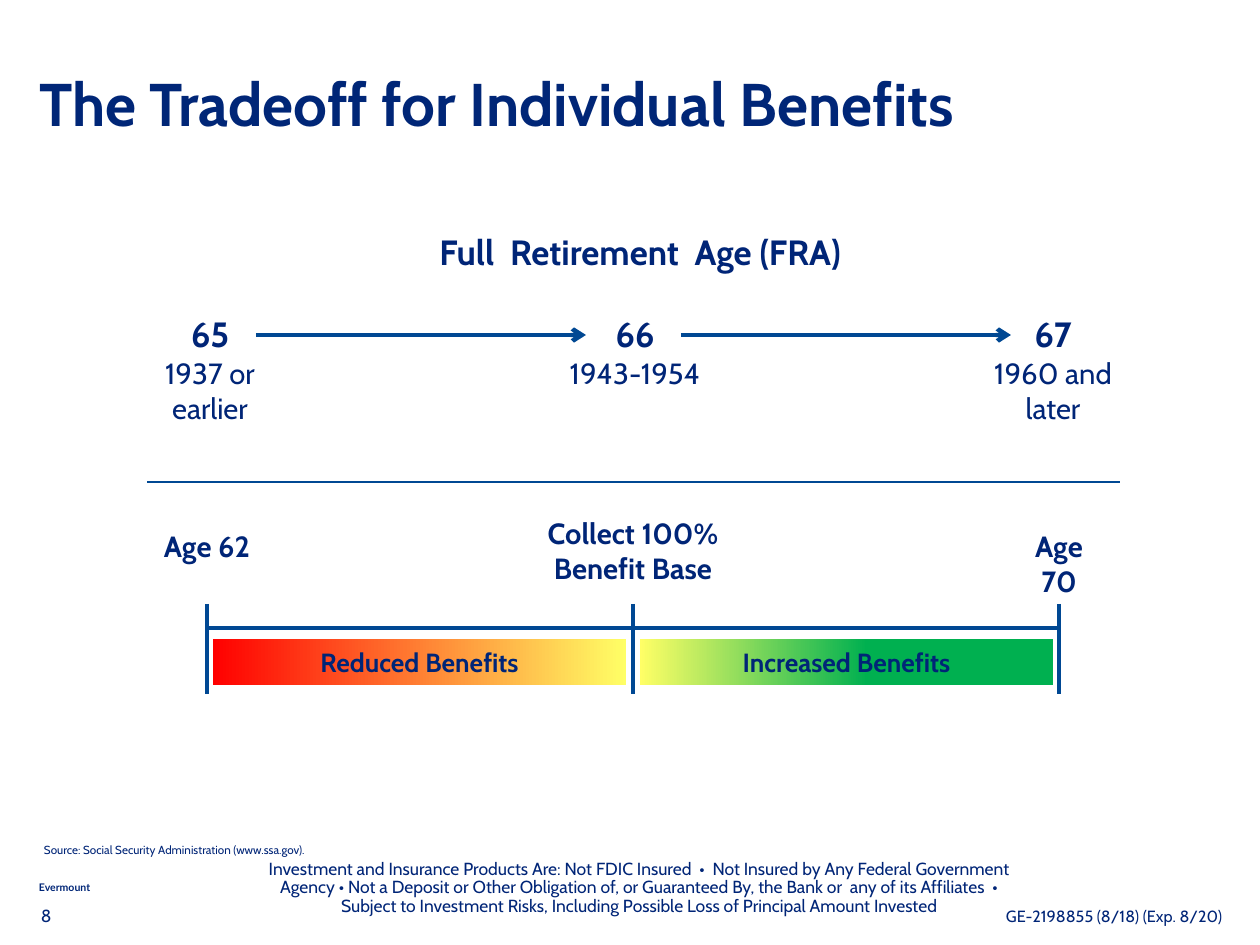
from lxml import etree
from pptx import Presentation
from pptx.dml.color import RGBColor
from pptx.enum.shapes import MSO_CONNECTOR, MSO_SHAPE
from pptx.enum.text import MSO_ANCHOR, MSO_AUTO_SIZE, PP_ALIGN
from pptx.oxml.ns import qn
from pptx.util import Emu, Pt

LEFT, MID = PP_ALIGN.LEFT, PP_ALIGN.CENTER
TOP, HALF, BASE = MSO_ANCHOR.TOP, MSO_ANCHOR.MIDDLE, MSO_ANCHOR.BOTTOM
FIXED = MSO_AUTO_SIZE.NONE
RECT, LINE = MSO_SHAPE.RECTANGLE, MSO_CONNECTOR.STRAIGHT
SCALE = 914400 / 105


def px(n):
    return Emu(round(n * SCALE))


def hue(code):
    return RGBColor.from_string(code)


class Deck:
    font, ink, navy, blue = "Cabin", "002577", "002677", "004893"

    def __init__(self):
        self.show = Presentation()
        self.show.slide_width, self.show.slide_height = px(1260), px(945)
        self.slide = self.show.slides.add_slide(self.show.slide_layouts[5])

    def words(self, frame, rows, align=LEFT, anchor=TOP, space=1.0,
              pad=(10, 5), wrap=True, color=None, font=None):
        """Each row is (text, size, bold)."""
        frame.auto_size = FIXED
        frame.word_wrap = wrap
        frame.vertical_anchor = anchor
        frame.margin_left = frame.margin_right = px(pad[0])
        frame.margin_top = frame.margin_bottom = px(pad[1])
        for i, (text, size, bold) in enumerate(rows):
            para = frame.add_paragraph() if i else frame.paragraphs[0]
            para.alignment = align
            para.line_spacing = space
            para.space_before = Pt(0)
            run = para.add_run()
            run.text = text
            run.font.name = font or self.font
            run.font.size = Pt(size)
            run.font.bold = bold
            run.font.color.rgb = hue(color or self.ink)

    def title(self, box, text, size):
        shape = self.slide.shapes.title
        shape.left, shape.top, shape.width, shape.height = map(px, box)
        self.words(shape.text_frame, [(text, size, True)], anchor=HALF,
                   space=0.9, color=self.navy)

    def text(self, box, rows, **style):
        shape = self.slide.shapes.add_textbox(*map(px, box))
        self.words(shape.text_frame, rows, **style)

    def line(self, start, end, width=3, arrow=False):
        line = self.slide.shapes.add_connector(
            LINE, *map(px, start), *map(px, end))
        line.line.color.rgb = hue(self.blue)
        line.line.width = Pt(width)
        props = line._element.spPr
        if arrow:
            etree.SubElement(props.find(qn("a:ln")), qn("a:tailEnd"),
                             type="arrow")
        etree.SubElement(props, qn("a:effectLst"))

    def bar(self, box, text, stops):
        shape = self.slide.shapes.add_shape(RECT, *map(px, box))
        shape.shadow.inherit = False
        shape.line.fill.background()
        shape.fill.gradient()
        shape.fill.gradient_angle = 0
        for stop, (place, code) in zip(shape.fill.gradient_stops, stops):
            stop.position = place
            stop.color.rgb = hue(code)
        self.words(shape.text_frame, [(text, 18, True)], align=MID,
                   anchor=HALF, pad=(10, 0), wrap=False)


def main():
    deck = Deck()
    deck.title((29, 66, 1192, 81), "The Tradeoff for Individual Benefits", 41.3)

    # Full retirement age by birth year
    deck.text((381, 226, 518, 52), [("Full  Retirement  Age (FRA)", 24, True)],
              align=MID)
    ages = [(210, 142, "65", "1937 or earlier"),
            (635, 190, "66", "1943-1954"),
            (1053, 142, "67", "1960 and later")]
    for mid, wide, age, born in ages:
        deck.text((mid - wide // 2, 308, wide, 124),
                  [(age, 24, True), (born, 20, False)], align=MID)
    for x in (256, 681):
        deck.line((x, 335), (x + 330, 335), arrow=True)

    # Divider
    deck.line((147, 482), (1120, 482), width=0.75)

    # Scale of collecting ages
    marks = [(207, 523, 112, "Age 62"),
             (633, 510, 264, "Collect 100% Benefit Base"),
             (1059, 523, 100, "Age 70")]
    deck.line((207, 628), (1059, 628))
    for x, top, wide, label in marks:
        deck.line((x, 604), (x, 694))
        deck.text((x - wide // 2, top, wide, 81), [(label, 20, True)],
                  align=MID)

    # Benefit bars
    deck.bar((213, 639, 413, 46), "Reduced Benefits",
             [(0, "FF0000"), (1, "FFFF66")])
    deck.bar((640, 639, 413, 46), "Increased Benefits",
             [(0, "FFFF66"), (0.55, "00B050")])

    # Source and footer
    deck.text((44, 843, 946, 14),
              [("Source: Social Security Administration (www.ssa.gov).", 8, False)],
              anchor=BASE, pad=(0, 0))
    deck.text((32, 875, 195, 25), [("Evermount", 7.2, True)], anchor=HALF,
              pad=(7, 4), color=deck.navy, font="Lato")
    deck.text((31, 902, 250, 32), [("8", 12, False)], space=0.9)
    deck.text((252, 855, 775, 83), [
        ("Investment and Insurance Products Are: Not FDIC Insured  •  Not Insured "
         "by Any Federal Government Agency • Not a Deposit or Other Obligation of, "
         "or Guaranteed By, the Bank or  any of its Affiliates  •", 12, False),
        ("Subject to Investment Risks, Including Possible Loss of Principal "
         "Amount Invested", 12, False)], align=MID, space=0.9)
    deck.text((996, 904, 250, 32),
              [("GE-2198855 (8/18) (Exp. 8/20)", 11.1, False)], space=0.9)

    deck.show.save("out.pptx")


if __name__ == "__main__":
    main()
